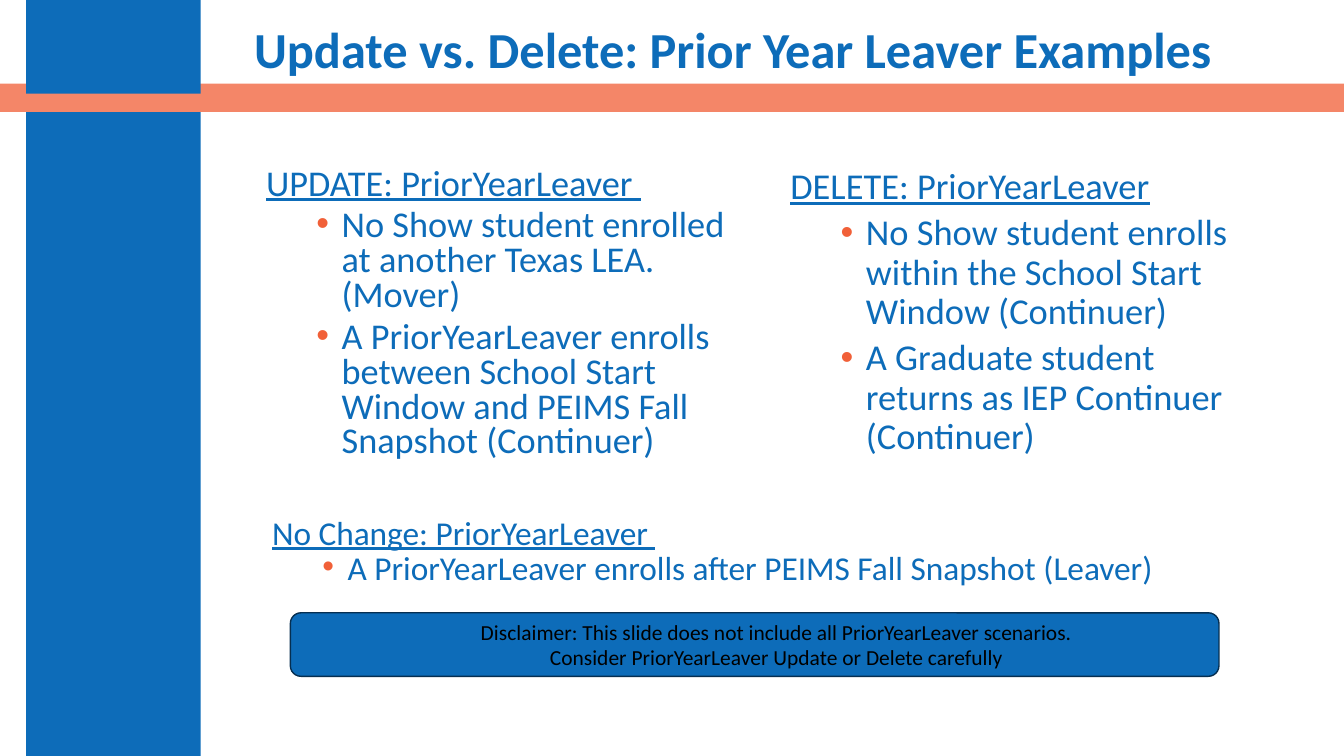
"""Build the slide on updating or deleting prior year leavers."""
from dataclasses import dataclass

from lxml import etree
from pptx import Presentation
from pptx.dml.color import RGBColor
from pptx.enum.shapes import MSO_SHAPE
from pptx.enum.text import MSO_ANCHOR, MSO_AUTO_SIZE, PP_ALIGN
from pptx.oxml.ns import qn
from pptx.util import Inches, Pt

RECT, ROUND = MSO_SHAPE.RECTANGLE, MSO_SHAPE.ROUNDED_RECTANGLE
MIDDLE = MSO_ANCHOR.MIDDLE
LEFT, CENTER = PP_ALIGN.LEFT, PP_ALIGN.CENTER
FIXED = MSO_AUTO_SIZE.NONE
BLUE, NAVY, CORAL, ORANGE, BLACK = "0D6CB9", "062F51", "F48668", "F16038", "000000"


@dataclass
class Band:
    left: float
    top: float
    width: float
    height: float
    fill: str


@dataclass
class Group:
    left: float
    top: float
    width: float
    height: float
    size: float
    lead: float
    head: str
    items: list[str]


BANDS = [
    Band(0, 0.83, 13.33, 0.18, CORAL),
    Band(0.26, 0, 1.73, 7.5, BLUE),
    Band(0, 0.93, 13.33, 0.18, CORAL),
]
GROUPS = [
    Group(2.54, 1.62, 4.88, 3.34, 25.9, 0.8, "UPDATE: PriorYearLeaver ", [
        "No Show student enrolled at another Texas LEA. (Mover)",
        "A PriorYearLeaver enrolls between School Start Window and "
        "PEIMS Fall Snapshot (Continuer)",
    ]),
    Group(7.74, 1.62, 4.88, 3.87, 26, 0.9, "DELETE: PriorYearLeaver", [
        "No Show student enrolls within the School Start Window (Continuer)",
        "A Graduate student returns as IEP Continuer (Continuer)",
    ]),
    Group(2.6, 5.14, 9.77, 0.85, 23.8, 0.7, "No Change: PriorYearLeaver ", [
        "A PriorYearLeaver enrolls after PEIMS Fall Snapshot (Leaver)",
    ]),
]
NOTES = [
    "Disclaimer: This slide does not include all PriorYearLeaver scenarios.",
    "Consider PriorYearLeaver Update or Delete carefully",
]


def rgb(code: str) -> RGBColor:
    """Turn a hex string into a colour."""
    return RGBColor.from_string(code)


def style(para, size: float, code: str, lead: float, gap: float = 0) -> None:
    """Set the font and spacing of a paragraph."""
    para.line_spacing = lead
    para.space_before = Pt(gap)
    para.font.name = "Calibri"
    para.font.size = Pt(size)
    para.font.color.rgb = rgb(code)


def bullet(para) -> None:
    """Give a paragraph an orange bullet with a hanging indent."""
    props = para._p.get_or_add_pPr()
    props.set("marL", str(Inches(0.75)))
    props.set("indent", str(Inches(-0.25)))
    tint = etree.SubElement(props, qn("a:buClr"))
    etree.SubElement(tint, qn("a:srgbClr"), val=ORANGE)
    etree.SubElement(props, qn("a:buFont"), typeface="Arial")
    etree.SubElement(props, qn("a:buChar"), char="•")


def place(item: Band | Group) -> list[int]:
    """Return the bounds of an item as lengths."""
    return [Inches(n) for n in (item.left, item.top, item.width, item.height)]


def draw_band(slide, band: Band, kind=RECT):
    """Draw a filled shape without an outline."""
    shape = slide.shapes.add_shape(kind, *place(band))
    shape.shadow.inherit = False
    shape.fill.solid()
    shape.fill.fore_color.rgb = rgb(band.fill)
    shape.line.fill.background()
    return shape


def draw_group(slide, group: Group) -> None:
    """Draw an underlined heading with its bullets."""
    frame = slide.shapes.add_textbox(*place(group)).text_frame
    frame.word_wrap = True
    head = frame.paragraphs[0]
    head.text = group.head
    style(head, group.size, BLUE, group.lead)
    head.font.underline = True
    for text in group.items:
        para = frame.add_paragraph()
        para.text = text
        para.level = 1
        bullet(para)
        style(para, group.size, BLUE, group.lead, 5)


def draw_title(slide) -> None:
    """Place and format the title."""
    title = slide.shapes.title
    title.left, title.top = Inches(2.42), Inches(0.22)
    title.width, title.height = Inches(10.41), Inches(0.59)
    frame = title.text_frame
    frame.text = "Update vs. Delete: Prior Year Leaver Examples"
    frame.auto_size = FIXED
    frame.vertical_anchor = MIDDLE
    para = frame.paragraphs[0]
    para.alignment = LEFT
    style(para, 36, BLUE, 0.9)
    para.font.bold = True


def draw_notes(slide) -> None:
    """Draw the disclaimer in its rounded box."""
    box = draw_band(slide, Band(2.88, 6.08, 9.21, 0.63, BLUE), ROUND)
    box.line.color.rgb = rgb(NAVY)
    box.line.width = Pt(1)
    frame = box.text_frame
    frame.word_wrap = True
    frame.vertical_anchor = MIDDLE
    frame.margin_left = Inches(0.53)
    frame.margin_top = Inches(0.1)
    frame.text = "\n".join(NOTES)
    for rank, para in enumerate(frame.paragraphs):
        para.alignment = CENTER
        style(para, 15.3, BLACK, 0.7, 5 * rank)


def main() -> None:
    """Build and save the slide."""
    deck = Presentation()
    deck.slide_width, deck.slide_height = Inches(13.33), Inches(7.5)
    slide = deck.slides.add_slide(deck.slide_layouts[5])
    for band in BANDS:
        draw_band(slide, band)
    draw_title(slide)
    for group in GROUPS:
        draw_group(slide, group)
    draw_notes(slide)
    deck.save("out.pptx")


if __name__ == "__main__":
    main()
